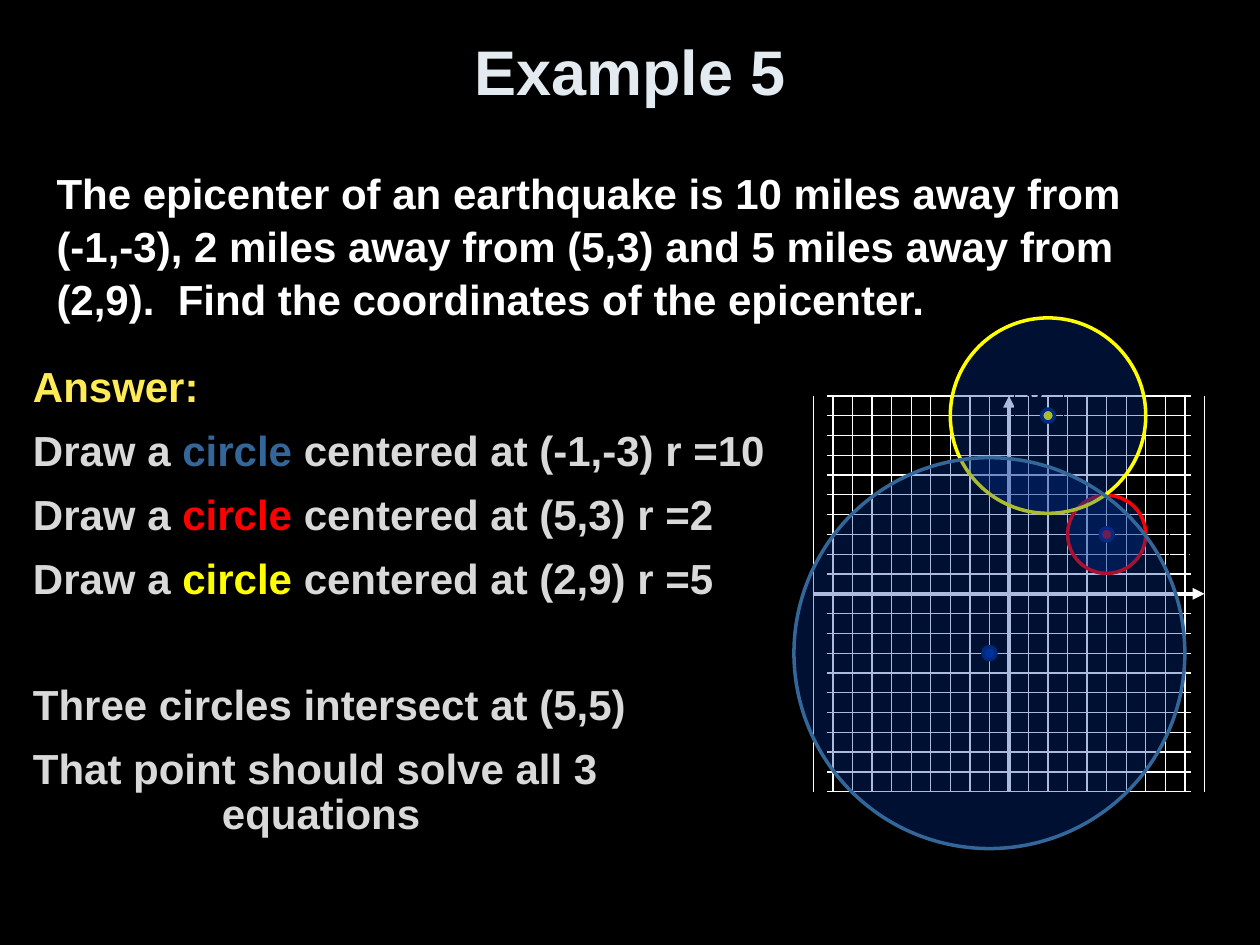
from lxml.etree import SubElement
from pptx import Presentation
from pptx.dml.color import RGBColor
from pptx.enum.shapes import MSO_CONNECTOR as Connector, MSO_SHAPE as Shape
from pptx.enum.text import MSO_ANCHOR as Anchor, MSO_AUTO_SIZE as AutoSize, PP_ALIGN as Align
from pptx.oxml.ns import qn
from pptx.util import Cm, Pt

BLACK, WHITE, GREY = "000000", "FFFFFF", "D9D9D9"
BLUE, RED, YELLOW = "336699", "FF0000", "FFFF00"
NAVY, DOT_EDGE = "003399", "002671"

TITLE = "Example 5"
QUESTION = ("The epicenter of an earthquake is 10 miles away from (-1,-3), "
            "2 miles away from (5,3) and 5 miles away from (2,9).  "
            "Find the coordinates of the epicenter.")
# centre, radius, outline colour, dot colour
CIRCLES = [((5, 3), 2, RED, RED), ((2, 9), 5, YELLOW, YELLOW), ((-1, -3), 10, BLUE, NAVY)]
# runs of (text, colour), space before in points
GAP, SECTION_GAP = 5.3, 40.7
ANSWER = [
    ([("Answer:", "FFEB55")], GAP),
    ([("Draw a ", GREY), ("circle", BLUE), (" centered at (-1,-3) r =10", GREY)], GAP),
    ([("Draw a ", GREY), ("circle", RED), (" centered at (5,3) r =2", GREY)], GAP),
    ([("Draw a ", GREY), ("circle", YELLOW), (" centered at (2,9) r =5", GREY)], GAP),
    ([("Three circles intersect at (5,5)", GREY)], SECTION_GAP),
    ([("That point should solve all 3 equations", GREY)], GAP),
]
AXIS_LABELS = [("y", 20.45, 7.57), ("x", 23.57, 10.72)]

# Grid in cm, running from -10 to 10 on both axes
REACH = 10
LEFT, TOP, WIDTH, HEIGHT = 16.4, 7.98, 7.88, 7.98
RIGHT, BOTTOM = LEFT + WIDTH, TOP + HEIGHT
CELL_X, CELL_Y = WIDTH / (2 * REACH), HEIGHT / (2 * REACH)
ORIGIN_X, ORIGIN_Y = LEFT + WIDTH / 2, TOP + HEIGHT / 2
ROW_INSET = 0.28
DOT_RADIUS = 0.13


def rgb(hex_color):
    return RGBColor.from_string(hex_color)


def place(shape, left, top, width, height):
    shape.left, shape.top, shape.width, shape.height = map(Cm, (left, top, width, height))


def add_text(paragraph, text, size=24, color=WHITE, align=None):
    run = paragraph.add_run()
    run.text = text
    run.font.name, run.font.size, run.font.bold = "Arial", Pt(size), True
    run.font.color.rgb = rgb(color)
    if align is not None:
        paragraph.alignment = align


def add_line(group, x1, y1, x2, y2, weight=0.75, arrow=False):
    line = group.shapes.add_connector(Connector.STRAIGHT, Cm(x1), Cm(y1), Cm(x2), Cm(y2))
    line.line.color.rgb = rgb(WHITE)
    line.line.width = Pt(weight)
    if arrow:
        SubElement(line.line._get_or_add_ln(), qn("a:tailEnd"), type="triangle")
    SubElement(line._element.spPr, qn("a:effectLst"))


def add_circle(slide, center, radius, fill, outline, opacity=None):
    """Draw a circle of the given radius in cm around a point in grid units."""
    x, y = ORIGIN_X + center[0] * CELL_X, ORIGIN_Y - center[1] * CELL_Y
    circle = slide.shapes.add_shape(Shape.OVAL, Cm(x - radius), Cm(y - radius),
                                    Cm(2 * radius), Cm(2 * radius))
    circle.shadow.inherit = False
    circle.fill.solid()
    circle.fill.fore_color.rgb = rgb(fill)
    circle.line.color.rgb = rgb(outline)
    circle.line.width = Pt(2)
    if opacity is not None:
        color = circle._element.spPr.find(qn("a:solidFill"))[0]
        SubElement(color, qn("a:alpha"), val=str(opacity * 1000))


def add_axis_label(group, text, left, top):
    label = group.shapes.add_shape(Shape.RECTANGLE, Cm(left), Cm(top), Cm(0.99), Cm(1.09))
    label.shadow.inherit = False
    label.fill.background()
    label.line.color.rgb = rgb(BLACK)
    label.line.width = Pt(0.75)
    label.text_frame.word_wrap = False
    label.text_frame.vertical_anchor = Anchor.TOP
    add_text(label.text_frame.paragraphs[0], text, size=16, color=BLACK, align=Align.JUSTIFY)


def add_grid(slide):
    grid = slide.shapes.add_group_shape()
    steps = range(2 * REACH + 1)
    for row in steps:
        y = TOP + row * CELL_Y
        add_line(grid, LEFT + ROW_INSET, y, RIGHT - ROW_INSET, y)
    add_line(grid, ORIGIN_X, BOTTOM, ORIGIN_X, TOP, weight=2.25, arrow=True)
    for text, left, top in AXIS_LABELS:
        add_axis_label(grid, text, left, top)
    add_line(grid, LEFT, ORIGIN_Y, RIGHT, ORIGIN_Y, weight=2.25, arrow=True)
    for column in steps:
        x = LEFT + column * CELL_X
        add_line(grid, x, TOP, x, BOTTOM)


def fill_answer(body):
    place(body, 0.41, 7.26, 15.6, 10.69)
    frame = body.text_frame
    frame.auto_size = AutoSize.NONE
    frame.vertical_anchor = Anchor.TOP
    for index, (runs, space_before) in enumerate(ANSWER):
        paragraph = frame.add_paragraph() if index else frame.paragraphs[0]
        paragraph.line_spacing = 0.9
        paragraph.space_before, paragraph.space_after = Pt(space_before), Pt(GAP)
        properties = paragraph._p.get_or_add_pPr()
        properties.set("marL", str(Cm(3.81)))
        properties.set("indent", str(-Cm(3.81)))
        SubElement(properties, qn("a:buNone"))
        for text, color in runs:
            add_text(paragraph, text, color=color)


def main():
    deck = Presentation()
    deck.slide_width, deck.slide_height = Cm(25.4), Cm(19.05)
    slide = deck.slides.add_slide(deck.slide_layouts[1])
    slide.background.fill.solid()
    slide.background.fill.fore_color.rgb = rgb(BLACK)

    title, body = slide.placeholders
    place(title, 1.27, 0.25, 22.86, 2.34)
    title.text_frame.vertical_anchor = Anchor.MIDDLE
    add_text(title.text_frame.paragraphs[0], TITLE, size=36, color="E3EBF1", align=Align.CENTER)

    question = slide.shapes.add_textbox(Cm(0.89), Cm(3.2), Cm(22.71), Cm(3.33))
    question.text_frame.word_wrap = True
    question.text_frame.paragraphs[0].line_spacing = 1.05
    add_text(question.text_frame.paragraphs[0], QUESTION)

    fill_answer(body)
    add_grid(slide)
    for center, _, _, dot in reversed(CIRCLES):
        add_circle(slide, center, DOT_RADIUS, dot, DOT_EDGE)
    for center, radius, outline, _ in CIRCLES:
        add_circle(slide, center, radius * CELL_X, NAVY, outline, opacity=33)
    deck.save("out.pptx")


if __name__ == "__main__":
    main()
